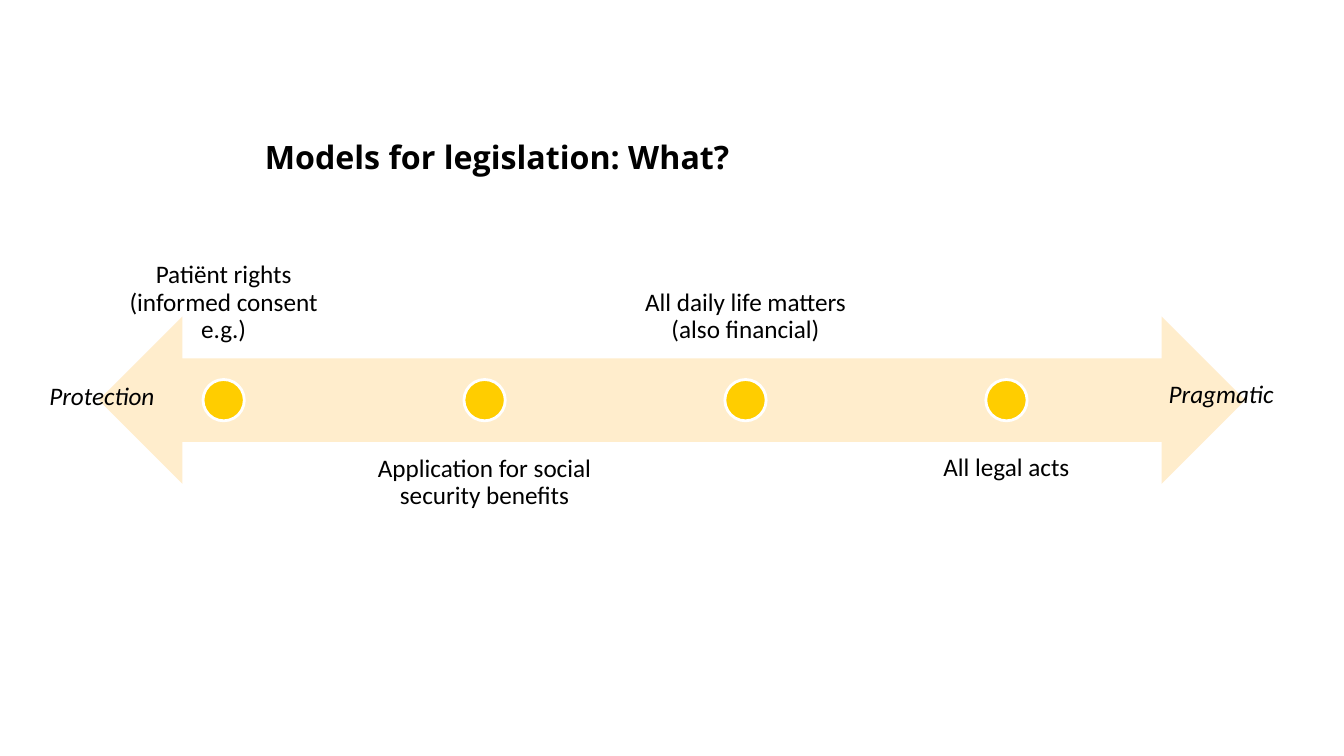
from pptx import Presentation
from pptx.dml.color import RGBColor
from pptx.enum.shapes import MSO_SHAPE as Shape
from pptx.enum.text import MSO_ANCHOR as Anchor, PP_ALIGN as Align
from pptx.util import Pt

TITLE = "Models for legislation: What?"
STEPS = [
    "Patiënt rights (informed consent e.g.)",
    "Application for social security benefits",
    "All daily life matters (also financial)",
    "All legal acts",
]
# text, left, top
ENDS = [("Pragmatic", 1160, 375), ("Protection", 49, 377)]

PX = 9144  # 100 px to the inch
ARROW = (98, 314, 1138, 166)
FIRST, STEP = 222, 259  # centre of the first dot, gap between centres
DOT, MID = 41, 397
BOX_W, BOX_H = 246, 166
ABOVE, BELOW = 189, 438

LABEL = {"name": "Calibri", "size": Pt(18)}
HEAD = {"name": "Open Sans", "size": Pt(23), "bold": True}


def color(text):
    return RGBColor.from_string(text)


def emu(*sizes):
    return [round(size * PX) for size in sizes]


def add_text(text, box, font, pad=(0, 0), anchor=Anchor.TOP, align=Align.LEFT,
             spacing=1.0):
    frame = slide.shapes.add_textbox(*emu(*box)).text_frame
    frame.word_wrap = True
    frame.vertical_anchor = anchor
    side, end = emu(*pad)
    frame.margin_left = frame.margin_right = side
    frame.margin_top = frame.margin_bottom = end
    para = frame.paragraphs[0]
    para.text = text
    para.alignment = align
    para.line_spacing = spacing
    for key, value in font.items():
        setattr(para.font, key, value)
    para.font.color.rgb = color("000000")


def add_shape(kind, box, fill, line=None):
    shape = slide.shapes.add_shape(kind, *emu(*box))
    shape.shadow.inherit = False
    shape.fill.solid()
    shape.fill.fore_color.rgb = color(fill)
    if line:
        shape.line.color.rgb = color(line)
        shape.line.width = Pt(2)
    else:
        shape.line.fill.background()


prs = Presentation()
prs.slide_width, prs.slide_height = emu(1334, 750)
slide = prs.slides.add_slide(prs.slide_layouts[6])

add_text(TITLE, (253, 131, 827, 137), HEAD, pad=(10, 5))
add_shape(Shape.LEFT_RIGHT_ARROW, ARROW, "FFEDCC")

for i, step in enumerate(STEPS):
    mid = FIRST + i * STEP
    top, anchor = (BELOW, Anchor.TOP) if i % 2 else (ABOVE, Anchor.BOTTOM)
    add_text(step, (mid - BOX_W / 2, top, BOX_W, BOX_H), LABEL, pad=(14, 14),
             anchor=anchor, align=Align.CENTER, spacing=0.9)
    add_shape(Shape.OVAL, (mid - DOT / 2, MID - DOT / 2, DOT, DOT),
              "FFCD00", "FFFFFF")

for text, left, top in ENDS:
    add_text(text, (left, top, 174, 30), {**LABEL, "italic": True})

prs.save("out.pptx")
